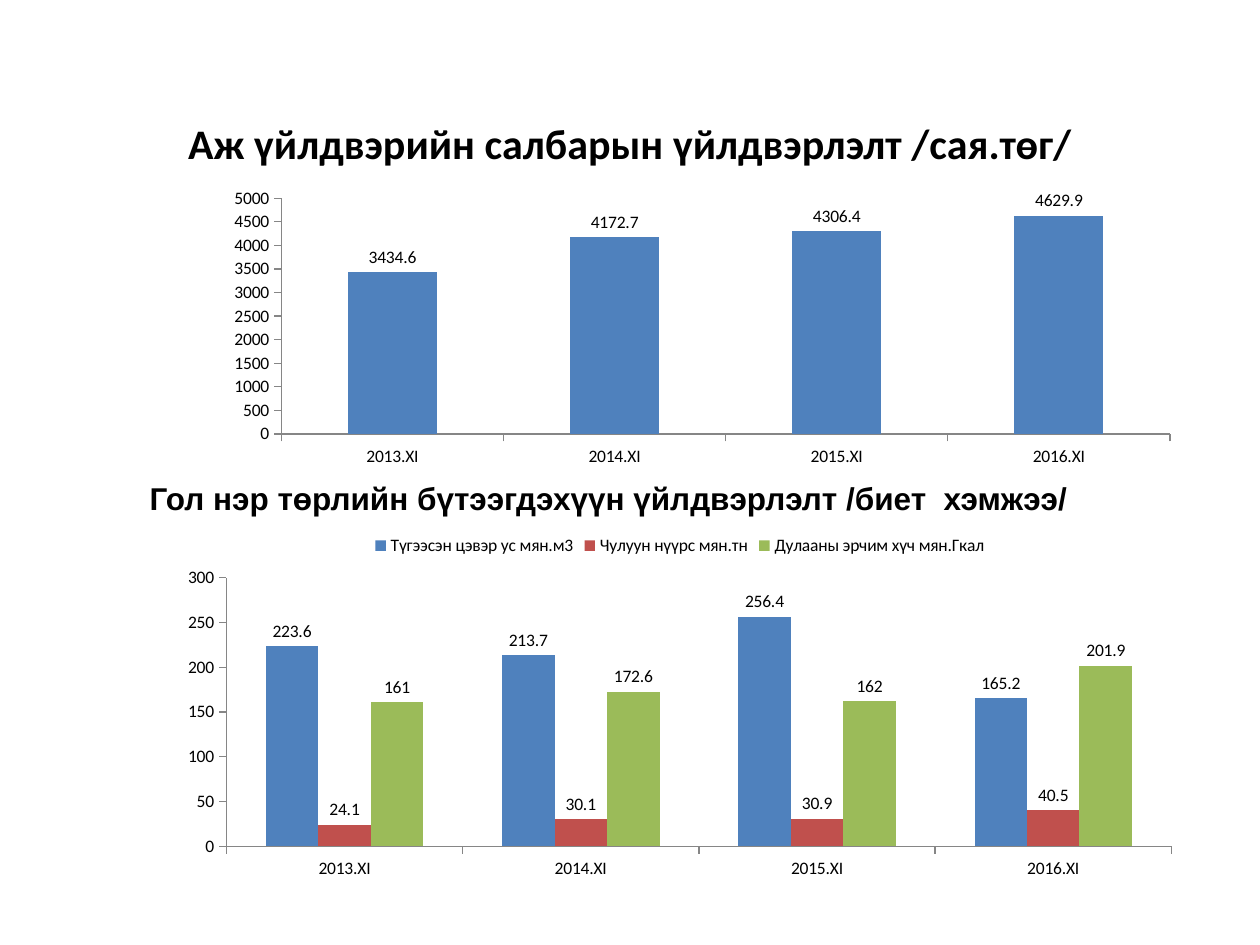
"""Build a slide with two column charts on industrial output."""
from lxml.etree import SubElement
from pptx import Presentation
from pptx.chart.data import CategoryChartData
from pptx.dml.color import RGBColor
from pptx.enum.chart import XL_CHART_TYPE, XL_LABEL_POSITION, XL_LEGEND_POSITION, XL_TICK_MARK
from pptx.enum.text import MSO_ANCHOR, PP_ALIGN
from pptx.oxml.ns import qn
from pptx.util import Inches, Pt


def color(hex_text):
    return RGBColor.from_string(hex_text)


def write(frame, text, font_name, size, alignment):
    para = frame.paragraphs[0]
    para.alignment = alignment
    span = para.add_run()
    span.text = text
    span.font.name = font_name
    span.font.size = Pt(size)
    span.font.bold = True
    span.font.color.rgb = color("000000")


deck = Presentation()
deck.slide_width, deck.slide_height = Inches(10), Inches(7.5)
page = deck.slides.add_slide(deck.slide_layouts[5])

title = page.shapes.title
title.left, title.top = Inches(0.5), Inches(0.78)
title.width, title.height = Inches(9), Inches(0.7)
title.text_frame.vertical_anchor = MSO_ANCHOR.MIDDLE
write(title.text_frame, "Аж үйлдвэрийн салбарын үйлдвэрлэлт /сая.төг/", "Calibri", 24, PP_ALIGN.CENTER)

subtitle = page.shapes.add_textbox(Inches(1.09), Inches(3.75), Inches(8.67), Inches(0.4))
subtitle.text_frame.word_wrap = True
write(subtitle.text_frame, "Гол нэр төрлийн бүтээгдэхүүн үйлдвэрлэлт /биет  хэмжээ/", "Arial", 18, PP_ALIGN.LEFT)

years = ["2013.XI", "2014.XI", "2015.XI", "2016.XI"]
palette = ["4F81BD", "C0504D", "9BBB59"]
products = {
    "Түгээсэн цэвэр ус мян.м3": [223.6, 213.7, 256.4, 165.2],
    "Чулуун нүүрс мян.тн": [24.1, 30.1, 30.9, 40.5],
    "Дулааны эрчим хүч мян.Гкал": [161, 172.6, 162, 201.9],
}
total = {"Series 1": [3434.6, 4172.7, 4306.4, 4629.9]}
charts = [
    (products, (1.33, 4.14, 8.13, 2.89), 300, 50, None),
    (total, (1.25, 1.41, 8.2, 2.34), 5000, 500, {"x": 0.12, "y": 0.07, "w": 0.86, "h": 0.8}),
]

for series_values, place, maximum, step, plot_area in charts:
    data = CategoryChartData()
    data.categories = years
    for name, values in series_values.items():
        data.add_series(name, values)
    chart = page.shapes.add_chart(XL_CHART_TYPE.COLUMN_CLUSTERED, *map(Inches, place), data).chart
    chart.has_title = False
    chart.font.name = "Calibri"
    chart.font.size = Pt(10)
    chart.font.color.rgb = color("000000")

    chart.has_legend = len(series_values) > 1
    if chart.has_legend:
        chart.legend.position = XL_LEGEND_POSITION.TOP
        chart.legend.include_in_layout = False

    for axis in (chart.category_axis, chart.value_axis):
        axis.has_major_gridlines = False
        axis.major_tick_mark = XL_TICK_MARK.OUTSIDE
        axis.format.line.color.rgb = color("868686")
    chart.value_axis.minimum_scale = 0
    chart.value_axis.maximum_scale = maximum
    chart.value_axis.major_unit = step

    plot = chart.plots[0]
    plot.gap_width = 150
    plot.overlap = 0
    plot.vary_by_categories = False
    for series, fill in zip(plot.series, palette):
        series.format.fill.solid()
        series.format.fill.fore_color.rgb = color(fill)
        labels = series.data_labels
        labels.show_value = True
        labels.position = XL_LABEL_POSITION.OUTSIDE_END

    if plot_area:
        area = chart.element.find(".//" + qn("c:plotArea"))
        layout = area.find(qn("c:layout"))
        if layout is None:
            layout = SubElement(area, qn("c:layout"))
            area.insert(0, layout)
        manual = SubElement(layout, qn("c:manualLayout"))
        settings = {"layoutTarget": "inner", "xMode": "edge", "yMode": "edge", **plot_area}
        for key, value in settings.items():
            SubElement(manual, qn("c:" + key)).set("val", str(value))

deck.save("out.pptx")
